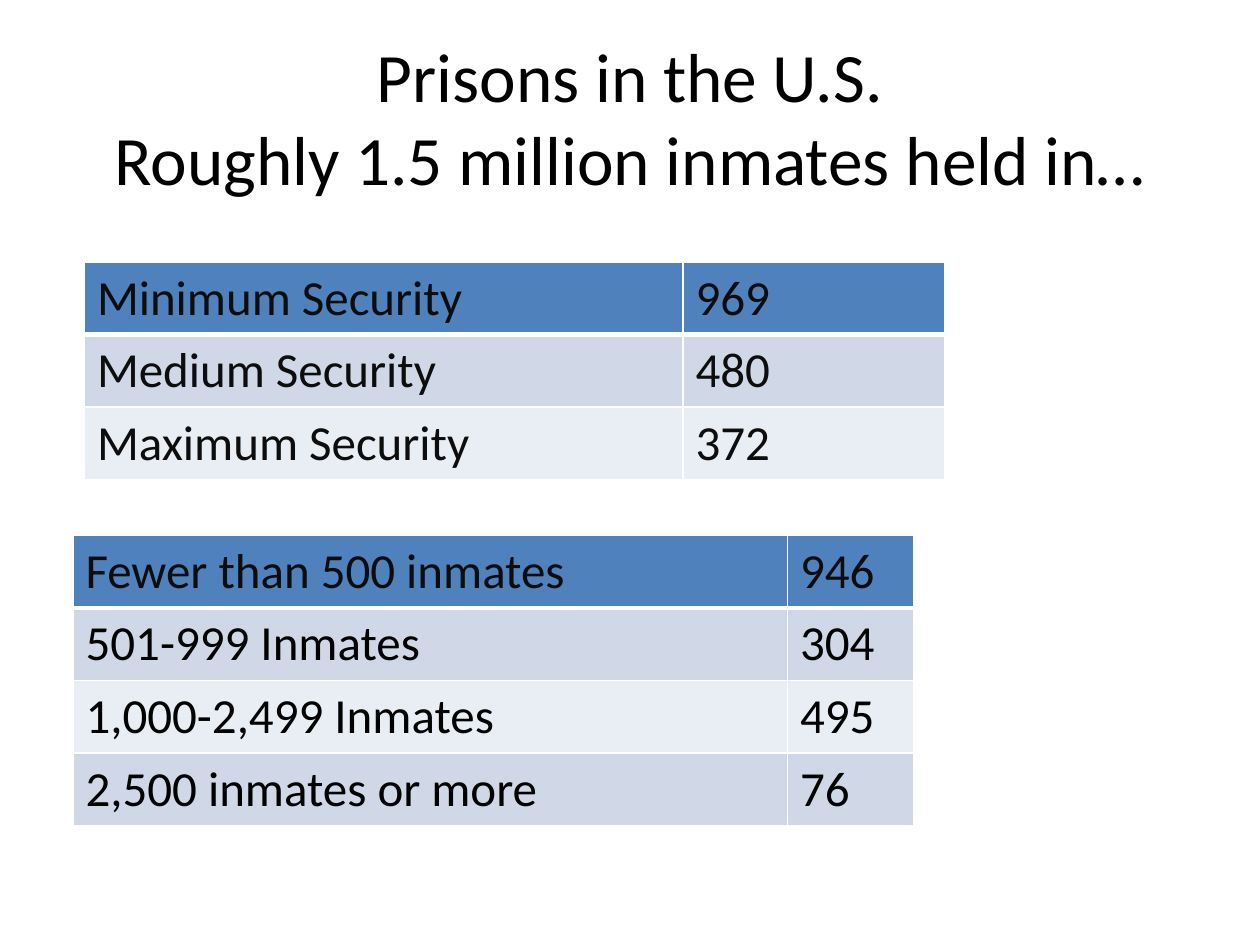
from dataclasses import dataclass

from lxml import etree
from pptx import Presentation
from pptx import util as u
from pptx.dml import color as col
from pptx.enum import text as txt
from pptx.oxml import ns


@dataclass(frozen=True)
class Theme:
    font: str = "Calibri"
    head: str = "4F81BD"
    bands: tuple = ("D0D8E8", "E9EDF4")
    rule: str = "FFFFFF"
    black: str = "000000"
    soft: str = "0D0D0D"
    title: float = 39.6
    body: float = 28
    thin: float = 1
    thick: float = 3


LOOK = Theme()


def add_run(para, words, size, ink):
    run = para.add_run()
    run.text = words
    font = run.font
    font.name = LOOK.font
    font.size = u.Pt(size)
    font.bold = False
    font.color.rgb = col.RGBColor.from_string(ink)


def add_rule(cell, side, width):
    props = cell._tc.get_or_add_tcPr()
    line = etree.SubElement(props, ns.qn(f"a:ln{side}"), w=str(u.Pt(width)))
    fill = etree.SubElement(line, ns.qn("a:solidFill"))
    etree.SubElement(fill, ns.qn("a:srgbClr"), val=LOOK.rule)


def add_title(slide, box, lines):
    title = slide.shapes.title
    title.left, title.top, title.width, title.height = map(u.Inches, box)
    frame = title.text_frame
    frame.auto_size = txt.MSO_AUTO_SIZE.NONE
    frame.word_wrap = True
    frame.vertical_anchor = txt.MSO_ANCHOR.MIDDLE
    para = frame.paragraphs[0]
    para.alignment = txt.PP_ALIGN.CENTER
    for i, line in enumerate(lines):
        if i:
            para.add_line_break()
        add_run(para, line, LOOK.title, LOOK.black)


def add_counts(slide, box, widths, rows, ink):
    frame = slide.shapes.add_table(len(rows), len(widths), *map(u.Inches, box))
    table = frame.table
    for column, width in zip(table.columns, widths):
        column.width = u.Inches(width)
    for r, row in enumerate(rows):
        fill = LOOK.bands[(r - 1) % 2] if r else LOOK.head
        edges = {
            "L": LOOK.thin,
            "R": LOOK.thin,
            "T": LOOK.thick if r == 1 else LOOK.thin,
            "B": LOOK.thin if r else LOOK.thick,
        }
        for c, words in enumerate(row):
            cell = table.cell(r, c)
            for side, width in edges.items():
                add_rule(cell, side, width)
            cell.fill.solid()
            cell.fill.fore_color.rgb = col.RGBColor.from_string(fill)
            para = cell.text_frame.paragraphs[0]
            add_run(para, words, LOOK.body, ink if r else LOOK.soft)


def main():
    deck = Presentation()
    deck.slide_width, deck.slide_height = u.Inches(10), u.Inches(7.5)
    slide = deck.slides.add_slide(deck.slide_layouts[5])
    add_title(
        slide,
        (0.5, 0.3, 9, 1.25),
        ("Prisons in the U.S.", "Roughly 1.5 million inmates held in…"),
    )
    levels = (
        ("Minimum Security", "969"),
        ("Medium Security", "480"),
        ("Maximum Security", "372"),
    )
    sizes = (
        ("Fewer than 500 inmates", "946"),
        ("501-999 Inmates", "304"),
        ("1,000-2,499 Inmates", "495"),
        ("2,500 inmates or more", "76"),
    )
    add_counts(slide, (0.67, 2.08, 6.83, 1.7), (4.75, 2.08), levels, LOOK.soft)
    add_counts(slide, (0.58, 4.25, 6.67, 2.27), (5.67, 1), sizes, LOOK.black)
    deck.save("out.pptx")


if __name__ == "__main__":
    main()
